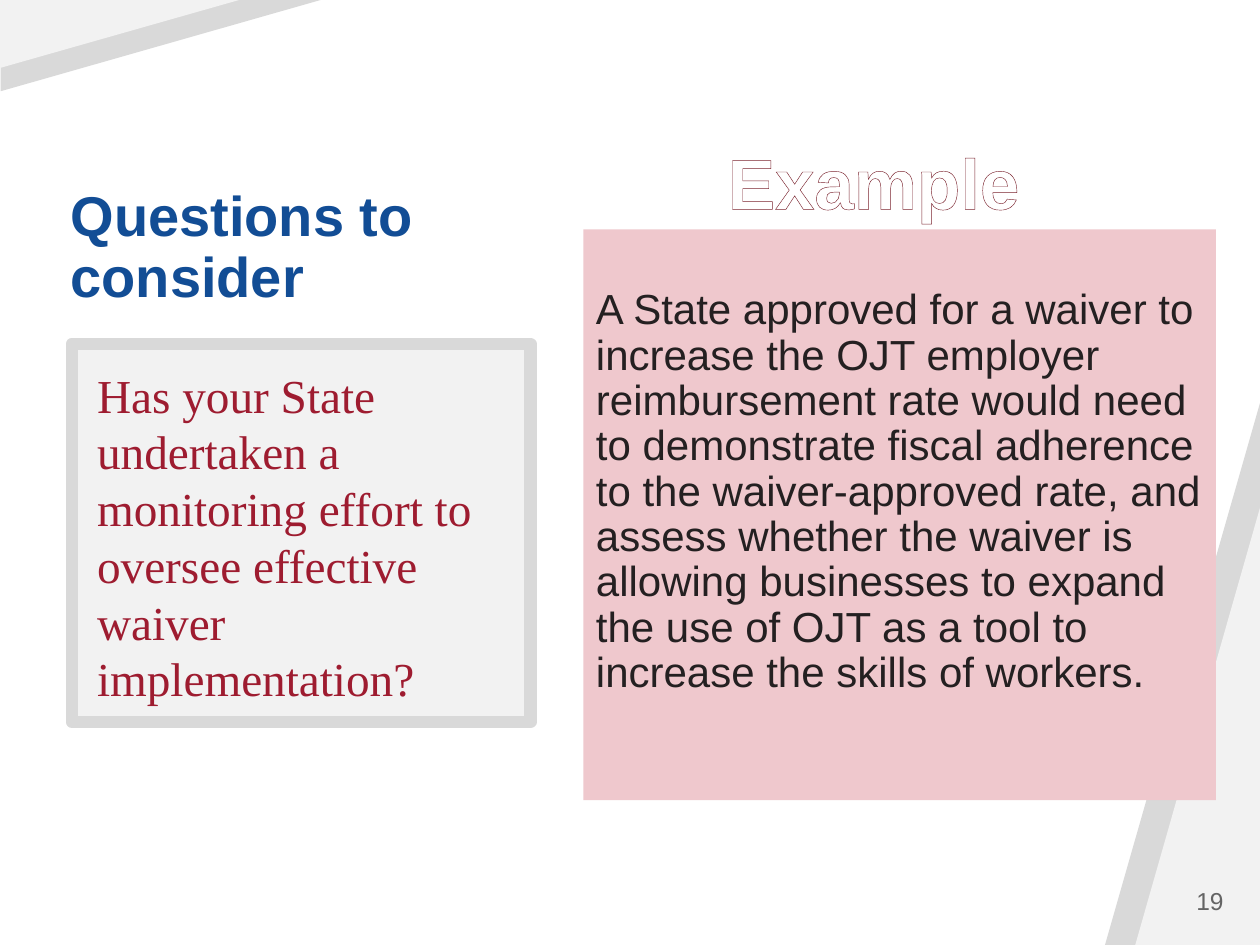
from lxml import etree
from pptx import Presentation
from pptx.dml.color import RGBColor
from pptx.enum import shapes, text
from pptx.oxml.ns import qn
from pptx.util import Inches, Pt

BLUE = RGBColor(0x12, 0x4D, 0x95)
RED = RGBColor(0x9E, 0x1C, 0x30)
MAROON = RGBColor(0x7A, 0x23, 0x2E)
PINK = RGBColor(0xEF, 0xC8, 0xCD)
INK = RGBColor(0x24, 0x20, 0x21)
GRAY = RGBColor(0x64, 0x64, 0x64)
MID_GRAY = RGBColor(0xD9, 0xD9, 0xD9)
PALE_GRAY = RGBColor(0xF2, 0xF2, 0xF2)
WHITE = RGBColor(0xFF, 0xFF, 0xFF)

QUESTION = ("Has your State undertaken a monitoring effort to oversee "
            "effective waiver implementation?")
EXAMPLE = ("A State approved for a waiver to increase the OJT employer "
           "reimbursement rate would need to demonstrate fiscal adherence to "
           "the waiver-approved rate, and assess whether the waiver is "
           "allowing businesses to expand the use of OJT as a tool to "
           "increase the skills of workers.")


def place(sp, box):
    sp.left, sp.top, sp.width, sp.height = map(Inches, box)


def fill(sp, color):
    sp.fill.solid()
    sp.fill.fore_color.rgb = color


def add_corner(s, box, color, top_left=False):
    """Add a right triangle filling the bottom right or top left corner."""
    sp = s.shapes.add_shape(shapes.MSO_SHAPE.ISOSCELES_TRIANGLE,
                            *map(Inches, box))
    sp.adjustments[0] = 1
    sp.shadow.inherit = False
    fill(sp, color)
    sp.line.fill.background()
    if top_left:
        sp.rotation = 270
        sp._element.spPr.find(qn("a:xfrm")).set("flipV", "1")


def write(sp, words, size, color, insets=(0.1, 0.05, 0.1, 0.05),
          font="Arial", bold=False, spacing=1.0,
          align=text.PP_ALIGN.LEFT, anchor=text.MSO_ANCHOR.MIDDLE):
    """Set one unbulleted paragraph; insets run left, top, right, bottom."""
    tf = sp.text_frame
    left, top, right, bottom = map(Inches, insets)
    frame = dict(word_wrap=True, auto_size=text.MSO_AUTO_SIZE.NONE,
                 vertical_anchor=anchor, margin_left=left, margin_top=top,
                 margin_right=right, margin_bottom=bottom)
    for name, value in frame.items():
        setattr(tf, name, value)
    p = tf.paragraphs[0]
    pPr = p._p.get_or_add_pPr()
    pPr.set("marL", "0")
    pPr.set("indent", "0")
    etree.SubElement(pPr, qn("a:buNone"))
    for name, value in dict(alignment=align, line_spacing=spacing,
                            space_before=Pt(0)).items():
        setattr(p, name, value)
    r = p.add_run()
    r.text = words
    for name, value in dict(name=font, size=Pt(size), bold=bold).items():
        setattr(r.font, name, value)
    r.font.color.rgb = color
    return r


def outline(r, color, width):
    ln = etree.Element(qn("a:ln"), w=str(Pt(width)))
    solid = etree.SubElement(ln, qn("a:solidFill"))
    etree.SubElement(solid, qn("a:srgbClr"), val=str(color))
    r._r.get_or_add_rPr().insert(0, ln)


def add_text(s, box, *args, **kwargs):
    return write(s.shapes.add_textbox(*map(Inches, box)), *args, **kwargs)


def main():
    prs = Presentation()
    prs.slide_width, prs.slide_height = Inches(10), Inches(7.5)
    s = prs.slides.add_slide(prs.slide_layouts[3])
    title, example, question = s.placeholders

    add_corner(s, (8.77, 3.2, 1.23, 4.3), MID_GRAY)
    add_corner(s, (9.01, 4.03, 0.99, 3.47), PALE_GRAY)
    add_corner(s, (0.92, -0.92, 0.73, 2.56), MID_GRAY, top_left=True)
    add_corner(s, (0.68, -0.68, 0.54, 1.9), PALE_GRAY, top_left=True)
    for ph in (title, example, question):  # bring in front of the corners
        s.shapes._spTree.append(ph._element)

    place(title, (0.56, 1.32, 3.64, 1.31))
    write(title, "Questions to consider", 32, BLUE, (0, 0.05, 0, 0.05),
          bold=True, spacing=0.9)

    place(example, (4.63, 1.82, 5.02, 4.53))
    fill(example, PINK)
    write(example, EXAMPLE, 24, INK, (0.1, 0.3, 0.1, 0.65), spacing=0.9)

    place(question, (0.57, 2.73, 3.64, 3))
    fill(question, PALE_GRAY)
    question.line.color.rgb = MID_GRAY
    question.line.width = Pt(7)
    write(question, QUESTION, 27, RED, (0.2, 0.2, 0.2, 0.15),
          font="Times New Roman")

    add_text(s, (8.41, 6.95, 1.4, 0.4), "19", 14, GRAY,
             align=text.PP_ALIGN.RIGHT)
    heading = add_text(s, (4.95, 1.06, 3.97, 0.76), "Example", 40.5, WHITE,
                       (0.07, 0.04, 0.07, 0.04), bold=True,
                       align=text.PP_ALIGN.CENTER, anchor=text.MSO_ANCHOR.TOP)
    outline(heading, MAROON, 0.8)

    prs.save("out.pptx")


if __name__ == "__main__":
    main()
